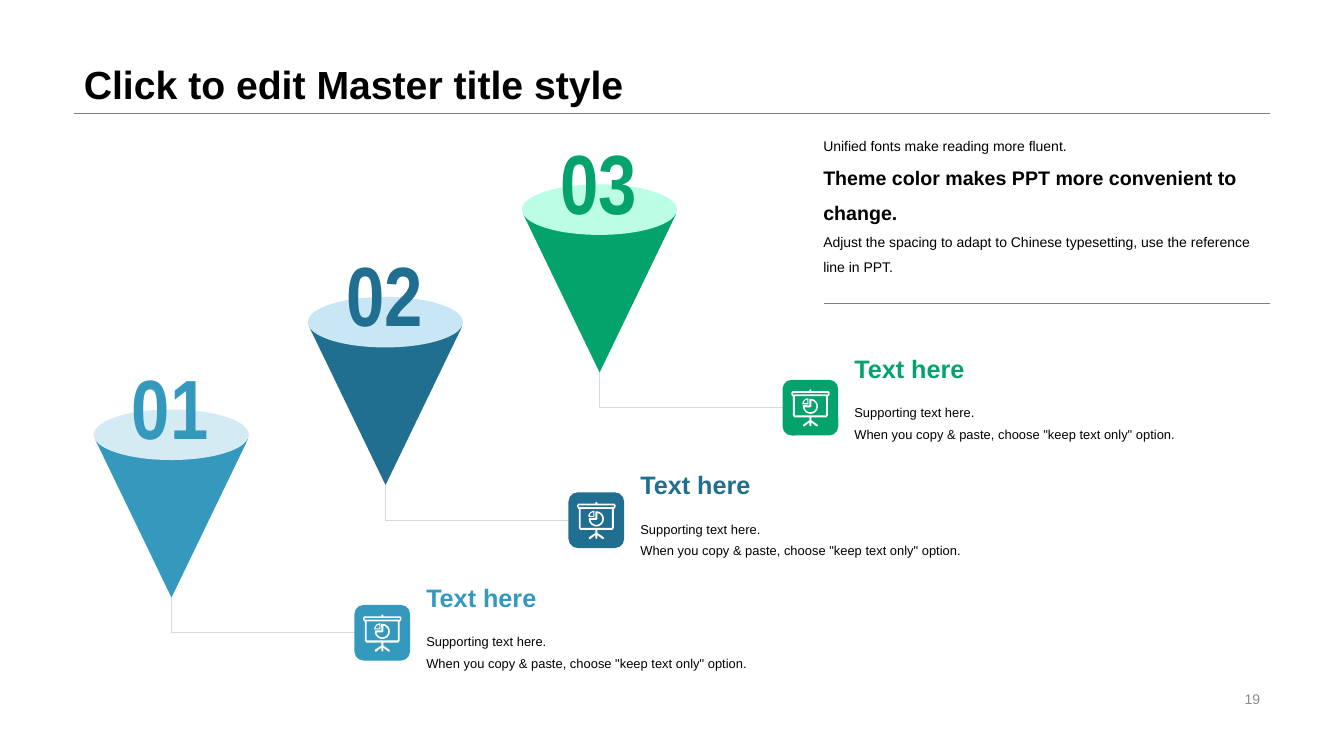
from dataclasses import dataclass
from math import cos, radians, sin

from lxml import etree
from pptx import Presentation
from pptx.dml.color import RGBColor
from pptx.enum.shapes import MSO_CONNECTOR, MSO_SHAPE
from pptx.enum.text import MSO_ANCHOR, PP_ALIGN
from pptx.oxml.ns import qn
from pptx.util import Pt

OVAL, ROUNDED = MSO_SHAPE.OVAL, MSO_SHAPE.ROUNDED_RECTANGLE
STRAIGHT, ELBOW = MSO_CONNECTOR.STRAIGHT, MSO_CONNECTOR.ELBOW
TOP, MIDDLE, BOTTOM = MSO_ANCHOR.TOP, MSO_ANCHOR.MIDDLE, MSO_ANCHOR.BOTTOM
LEFT, CENTER, RIGHT = PP_ALIGN.LEFT, PP_ALIGN.CENTER, PP_ALIGN.RIGHT


@dataclass(frozen=True)
class Theme:
    """Colours, fonts and type sizes of the slide."""
    font: str = "Arial"
    number_font: str = "Arial Narrow"
    black: str = "000000"
    white: str = "FFFFFF"
    page_gray: str = "8C8C8C"
    rule_gray: str = "808080"
    link_gray: str = "D9D9D9"
    title: float = 28
    number: float = 60
    heading: float = 18
    statement: float = 14
    body: float = 10
    caption: float = 9.2
    hairline: float = 0.25


@dataclass(frozen=True)
class Step:
    """One numbered cone with its colours and caption position."""
    number: str
    color: str
    rim: str
    caption_top: float


THEME = Theme()
STEPS = [
    Step("01", "3599BD", "D5EBF3", 412.3),
    Step("02", "206F90", "C8E6F3", 331.8),
    Step("03", "04A36B", "BCFDE6", 248.6),
]
FIRST_X, FIRST_Y, STEP_X, STEP_Y = 66.9, 292.5, 152.9, -80.4
RIM_WIDTH, RIM_HEIGHT, TILE = 110.9, 36.1, 39.8
ICON_UNIT = 0.72
EASEL_HALF = [
    (0, 0), (1, 1), (1, 2), (18, 2), (19, 3.5), (19, 5), (18, 7), (17.3, 7),
    (17.3, 26), (16, 28), (1, 28), (1, 31), (7, 35), (7.5, 36), (7, 37),
    (6, 37), (1, 33), (1, 36), (0, 37),
]


def mirrored(half):
    """Return a closed outline from its right half, about x = 19."""
    right = [(19 + x, y) for x, y in half]
    return right + [(19 - x, y) for x, y in reversed(half)]


def arc(center_x, center_y, radius, start, end, count=20):
    """Return points along an arc given in degrees, clockwise."""
    angles = [radians(start + (end - start) * i / count) for i in range(count + 1)]
    return [(center_x + radius * cos(a), center_y + radius * sin(a)) for a in angles]


def easel_contours():
    """Return the outlines of the presentation-board icon."""
    return [
        mirrored(EASEL_HALF),
        mirrored([(15.5, 7), (15.5, 26)]),
        mirrored([(17.5, 3.6), (17.5, 5.3)]),
        arc(19, 17, 7.5, -98, 188) + [(18, 16)],
        arc(19, 17, 5.9, -80, 170) + [(19, 18), (20, 17)],
        arc(17, 15, 6, 180, 270) + [(17, 15)],
        arc(16, 14, 3.5, 180, 270) + [(16, 14)],
    ]


def paragraph(text, **style):
    """Return a paragraph's text with its format."""
    return text, style


class SlideBuilder:
    """Draws styled elements on one slide, with lengths in points."""

    def __init__(self, slide, theme):
        """Keep the slide and the theme."""
        self.slide = slide
        self.theme = theme

    def paint(self, shape, color):
        """Give a shape a flat fill with no line or shadow."""
        shape.shadow.inherit = False
        shape.fill.solid()
        shape.fill.fore_color.rgb = RGBColor.from_string(color)
        shape.line.fill.background()

    def shape(self, kind, left, top, width, height, color):
        """Add a filled preset shape."""
        box = (Pt(value) for value in (left, top, width, height))
        self.paint(self.slide.shapes.add_shape(kind, *box), color)

    def outline(self, contours, left, top, color, unit=1):
        """Add a filled freeform made of closed contours."""
        placed = [[(Pt(left + x * unit), Pt(top + y * unit)) for x, y in contour]
                  for contour in contours]
        builder = self.slide.shapes.build_freeform(*placed[0][0], scale=1.0)
        builder.add_line_segments(placed[0][1:], close=True)
        for contour in placed[1:]:
            builder.move_to(*contour[0])
            builder.add_line_segments(contour[1:], close=True)
        self.paint(builder.convert_to_shape(), color)

    def line(self, start, end, color, kind=STRAIGHT):
        """Add a hairline; an elbow goes down first, then across."""
        ends = (Pt(value) for value in (*start, *end))
        connector = self.slide.shapes.add_connector(kind, *ends)
        connector.line.color.rgb = RGBColor.from_string(color)
        connector.line.width = Pt(self.theme.hairline)
        properties = connector._element.spPr
        etree.SubElement(properties, qn("a:effectLst"))
        if kind == ELBOW:
            geometry = properties.find(qn("a:prstGeom"))
            guides = geometry.find(qn("a:avLst"))
            if guides is None:
                guides = etree.SubElement(geometry, qn("a:avLst"))
            etree.SubElement(guides, qn("a:gd"), name="adj1", fmla="val -100")

    def text(self, left, top, width, height, paragraphs, anchor=TOP, wrap=True):
        """Add a text box with formatted paragraphs."""
        box = (Pt(value) for value in (left, top, width, height))
        frame = self.slide.shapes.add_textbox(*box).text_frame
        frame.word_wrap = wrap
        frame.vertical_anchor = anchor
        for index, (text, style) in enumerate(paragraphs):
            target = frame.add_paragraph() if index else frame.paragraphs[0]
            self.fill_paragraph(target, text, **style)

    def fill_paragraph(self, target, text, size, color=None, bold=False, font=None,
                       align=LEFT, spacing=1.0):
        """Fill a paragraph with one formatted run."""
        target.alignment = align
        target.line_spacing = spacing
        run = target.add_run()
        run.text = text
        run.font.name = font or self.theme.font
        run.font.size = Pt(size)
        run.font.bold = bold
        run.font.color.rgb = RGBColor.from_string(color or self.theme.black)

    def step(self, step, x, y):
        """Add a numbered cone, its link, icon tile and caption."""
        theme = self.theme
        tip = (x + 55.6, y + 134.4)
        tile_x, tile_y = x + 186.3, y + 139.6
        cone = [(5, 0), (107, 0), (109.4, 1), (54.7, 114.3), (0, 1)]
        self.outline([cone], x + 0.9, y + 20.1, step.color)
        self.shape(OVAL, x, y, RIM_WIDTH, RIM_HEIGHT, step.rim)
        self.text(x - 0.7, y - 41.9, RIM_WIDTH, 78.5, [
            paragraph(step.number, size=theme.number, color=step.color, bold=True,
                      font=theme.number_font, align=CENTER)], MIDDLE, wrap=False)
        self.line(tip, (tile_x, y + 159.2), theme.link_gray, ELBOW)
        self.shape(ROUNDED, tile_x, tile_y, TILE, TILE, step.color)
        self.outline(easel_contours(), tile_x + 6.2, tile_y + 6.7, theme.white, ICON_UNIT)
        caption = {"size": theme.caption, "spacing": 1.4}
        self.text(x + 230.5, step.caption_top + 32.6, 283.7, 39.8, [
            paragraph("Supporting text here.", **caption),
            paragraph('When you copy & paste, choose "keep text only" option.', **caption)])
        self.text(x + 230.5, step.caption_top, 283.7, 32.4, [
            paragraph("Text here", size=theme.heading, color=step.color, bold=True)],
            wrap=False)


def main():
    """Build the slide and save it."""
    presentation = Presentation()
    presentation.slide_width, presentation.slide_height = Pt(960), Pt(540)
    slide = presentation.slides.add_slide(presentation.slide_layouts[6])
    builder = SlideBuilder(slide, THEME)
    builder.line((52.8, 80.9), (907.2, 80.9), THEME.rule_gray)
    builder.text(52.8, 0, 854.4, 80.9, [
        paragraph("Click to edit Master title style", size=THEME.title, bold=True,
                  spacing=0.9)], BOTTOM)
    builder.text(678.2, 491, 229, 16.6, [
        paragraph("19", size=THEME.body, color=THEME.page_gray, align=RIGHT)], MIDDLE)
    for index, step in enumerate(STEPS):
        builder.step(step, FIRST_X + index * STEP_X, FIRST_Y + index * STEP_Y)
    body = {"size": THEME.body, "spacing": 1.5}
    builder.text(581, 88.6, 326.2, 123.1, [
        paragraph("Unified fonts make reading more fluent.", **body),
        paragraph("Theme color makes PPT more convenient to change.",
                  size=THEME.statement, bold=True, spacing=1.5),
        paragraph("Adjust the spacing to adapt to Chinese typesetting, "
                  "use the reference line in PPT.", **body)])
    builder.line((588.9, 216.7), (907.2, 216.7), THEME.rule_gray)
    presentation.save("out.pptx")


if __name__ == "__main__":
    main()
